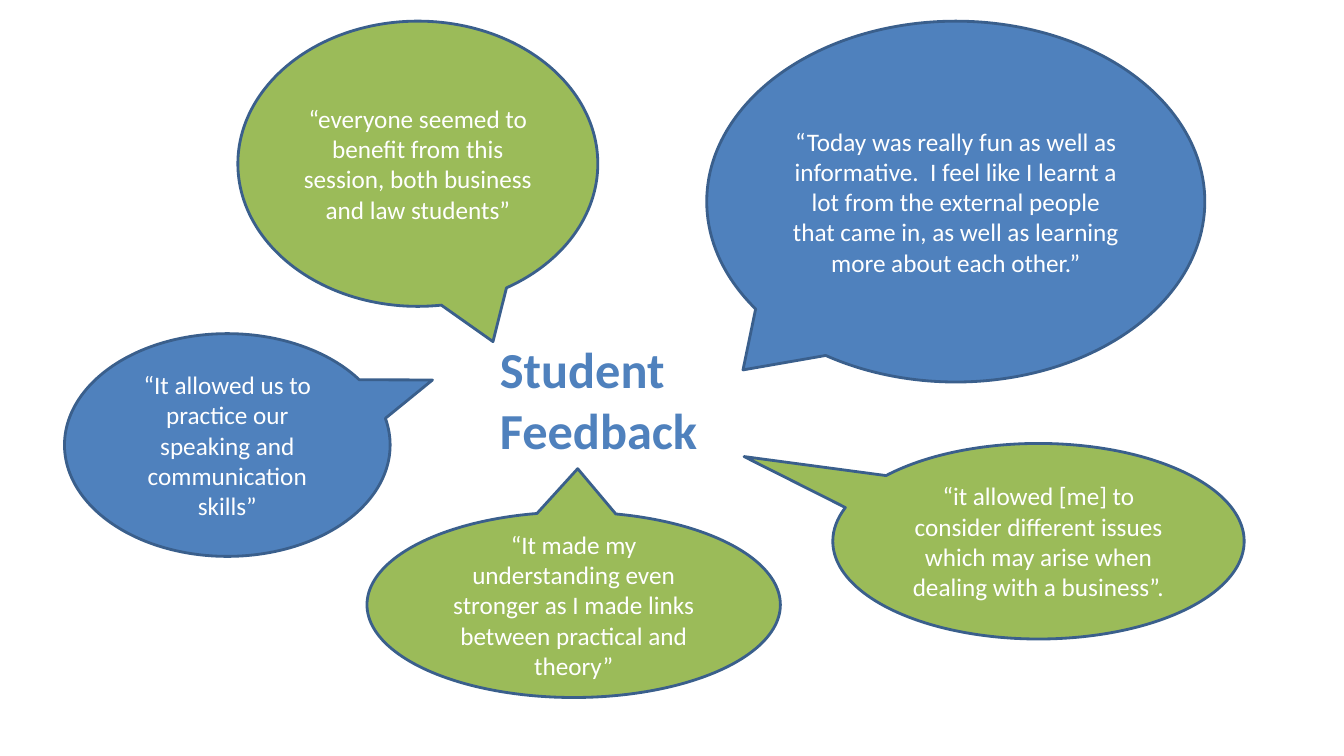
from dataclasses import dataclass

from pptx import Presentation
from pptx.dml.color import RGBColor
from pptx.enum.shapes import MSO_SHAPE
from pptx.enum.text import MSO_ANCHOR, PP_ALIGN
from pptx.slide import Slide
from pptx.util import Emu, Pt

EMU_PER_PX = 9144


@dataclass(frozen=True)
class Theme:
    font: str = "Calibri"
    blue: RGBColor = RGBColor(0x4F, 0x81, 0xBD)
    green: RGBColor = RGBColor(0x9B, 0xBB, 0x59)
    outline: RGBColor = RGBColor(0x3A, 0x5F, 0x8C)
    white: RGBColor = RGBColor(0xFF, 0xFF, 0xFF)
    title_size: Pt = Pt(36)
    quote_size: Pt = Pt(18)
    outline_width: Pt = Pt(2)


@dataclass(frozen=True)
class Bubble:
    text: str
    left: int
    top: int
    width: int
    height: int
    tail_x: int
    tail_y: int
    fill: RGBColor


THEME = Theme()

BUBBLES = [
    Bubble("“Today was really fun as well as informative.  I feel like I learnt a lot "
           "from the external people that came in, as well as learning more about each other.”",
           701, 21, 494, 358, 737, 367, THEME.blue),
    Bubble("“everyone seemed to benefit from this session, both business and law students”",
           236, 21, 357, 283, 489, 339, THEME.green),
    Bubble("“it allowed [me] to consider different issues which may arise "
           "when dealing with a business”.",
           826, 440, 408, 194, 738, 453, THEME.green),
    Bubble("“It allowed us to practice our speaking and communication skills”",
           64, 331, 323, 221, 429, 377, THEME.blue),
    Bubble("“It made my understanding even stronger as I made links "
           "between practical and theory”",
           364, 508, 410, 184, 573, 465, THEME.green),
]


def px(n: int) -> Emu:
    return Emu(n * EMU_PER_PX)


def add_bubble(s: Slide, b: Bubble) -> None:
    sp = s.shapes.add_shape(MSO_SHAPE.OVAL_CALLOUT, px(b.left), px(b.top),
                            px(b.width), px(b.height))
    sp.adjustments[0] = (b.tail_x - b.left) / b.width - 0.5
    sp.adjustments[1] = (b.tail_y - b.top) / b.height - 0.5
    sp.shadow.inherit = False
    sp.fill.solid()
    sp.fill.fore_color.rgb = b.fill
    sp.line.color.rgb = THEME.outline
    sp.line.width = THEME.outline_width
    tf = sp.text_frame
    tf.word_wrap = True
    tf.vertical_anchor = MSO_ANCHOR.MIDDLE
    p = tf.paragraphs[0]
    p.text = b.text
    p.alignment = PP_ALIGN.CENTER
    p.font.name = THEME.font
    p.font.size = THEME.quote_size
    p.font.color.rgb = THEME.white


def add_title(s: Slide, text: str) -> None:
    sp = s.shapes.add_textbox(px(486), px(331), px(236), px(131))
    tf = sp.text_frame
    tf.word_wrap = True
    p = tf.paragraphs[0]
    p.text = text
    p.font.name = THEME.font
    p.font.size = THEME.title_size
    p.font.bold = True
    p.font.color.rgb = THEME.blue


def main() -> None:
    prs = Presentation()
    prs.slide_width, prs.slide_height = px(1333), px(750)
    s = prs.slides.add_slide(prs.slide_layouts[6])
    add_title(s, "Student Feedback")
    for b in BUBBLES:
        add_bubble(s, b)
    prs.save("out.pptx")


if __name__ == "__main__":
    main()
